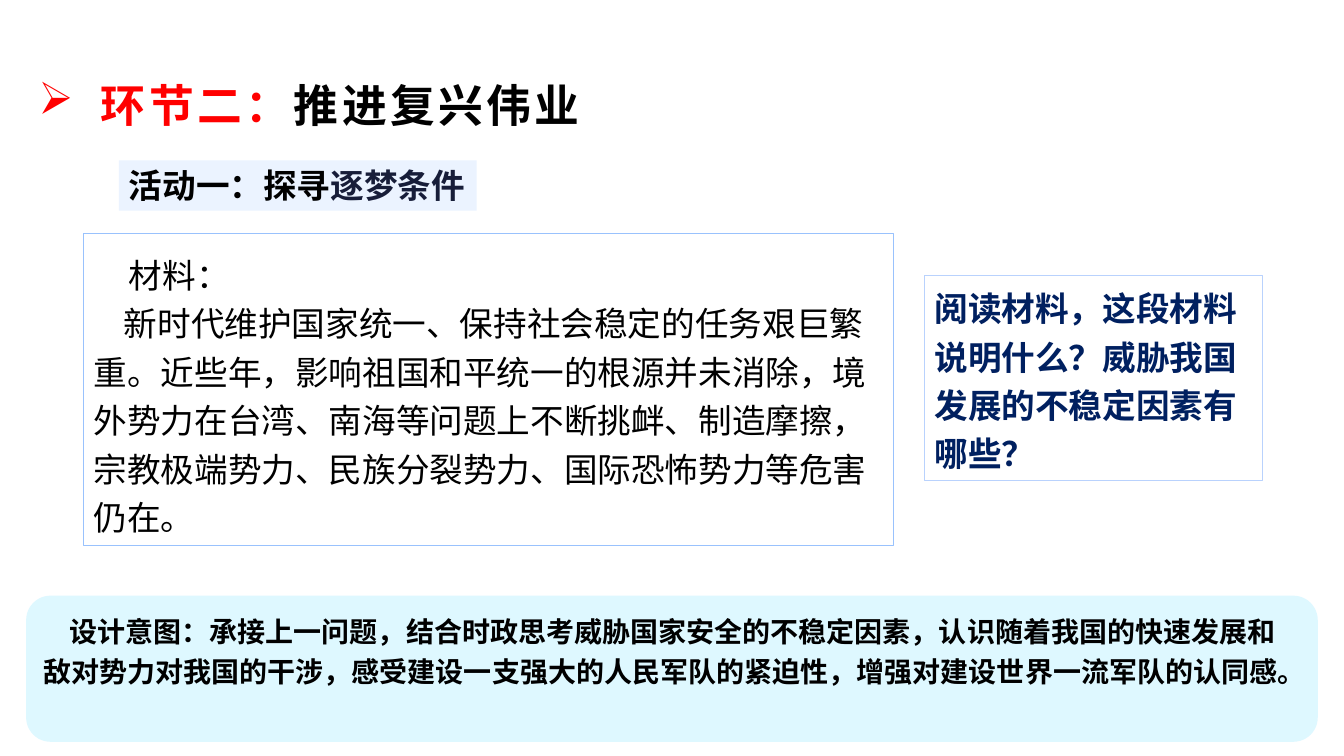
from lxml import etree
from pptx import Presentation, util as u
from pptx.dml.color import RGBColor
from pptx.enum import shapes, text
from pptx.oxml.ns import qn

WIDTH, HEIGHT = u.Inches(13.33), u.Inches(7.5)
SANS, LATIN = "Noto Sans CJK SC", "Arial"
RED = RGBColor(0xFF, 0x00, 0x00)
BLACK = RGBColor(0x00, 0x00, 0x00)
INK = RGBColor(0x17, 0x1D, 0x39)
NAVY = RGBColor(0x00, 0x20, 0x60)
CYAN = RGBColor(0xDE, 0xF8, 0xFF)
PALE_BLUE = RGBColor(0xEB, 0xF3, 0xFF)
BLUE_LINE = RGBColor(0x99, 0xC2, 0xFD)
LIGHT_LINE = RGBColor(0xB9, 0xD2, 0xFD)


def area(left, top, width, height):
    return [int(share * side / 100) for share, side in
            zip((left, top, width, height), (WIDTH, HEIGHT) * 2)]


def style_font(font, size, color, bold=False, name=SANS):
    font.size, font.bold, font.name = u.Pt(size), bold, name
    font.color.rgb = color
    latin = font._element.find(qn("a:latin"))
    east = etree.Element(qn("a:ea"), typeface=SANS)
    latin.addnext(east)


def set_indent(para, first, margin=0):
    properties = para._p.get_or_add_pPr()
    properties.set("marL", str(u.Inches(margin)))
    properties.set("indent", str(u.Inches(first)))
    return properties


def add_panel(page, place, kind=shapes.MSO_SHAPE.RECTANGLE, fill=None, line=None):
    box = page.shapes.add_shape(kind, *area(*place))
    box.shadow.inherit = False
    if fill is None:
        box.fill.background()
    else:
        box.fill.solid()
        box.fill.fore_color.rgb = fill
    if line is None:
        box.line.fill.background()
    else:
        box.line.color.rgb = line
        box.line.width = u.Pt(0.75)
    box.text_frame.word_wrap = True
    box.text_frame.vertical_anchor = text.MSO_ANCHOR.TOP
    return box.text_frame


def write_para(para, words, size, color=BLACK, bold=False, first=0):
    set_indent(para, first)
    para.alignment = text.PP_ALIGN.LEFT
    para.line_spacing = 1.2
    para.add_run().text = words
    style_font(para.font, size, color, bold)


def write_spans(para, size, spans, spacing=None):
    para.alignment = text.PP_ALIGN.LEFT
    for words, color, name in spans:
        span = para.add_run()
        span.text = words
        style_font(span.font, size, color, True, name)
        if spacing:
            span.font._element.set("spc", str(int(spacing * 100)))


def add_heading(page):
    frame = page.shapes.add_textbox(*area(2.33, 9.33, 90, 8.93)).text_frame
    frame.word_wrap = True
    frame.vertical_anchor = text.MSO_ANCHOR.MIDDLE
    frame.margin_left = frame.margin_right = u.Inches(0.07)
    frame.margin_top = frame.margin_bottom = u.Inches(0.03)
    para = frame.paragraphs[0]
    properties = set_indent(para, -0.62, 0.62)
    etree.SubElement(properties, qn("a:buChar"), char="➢")
    write_spans(para, 32, [("环节二：", RED, SANS), ("推进复兴伟业", BLACK, SANS)], 2.4)


def add_activity(page):
    frame = add_panel(page, (8.85, 21.2, 26.63, 6.67), fill=PALE_BLUE)
    frame.word_wrap = False
    write_spans(frame.paragraphs[0], 24, [
        ("活动一", BLACK, LATIN), ("：探寻", BLACK, SANS), ("逐梦条件", INK, SANS)])


def add_material(page):
    frame = add_panel(page, (6.23, 30.93, 60.24, 41.2), line=BLUE_LINE)
    frame.margin_top = u.Inches(0.13)
    write_para(frame.paragraphs[0], "材料：", 24, first=0.35)
    write_para(frame.add_paragraph(),
               "新时代维护国家统一、保持社会稳定的任务艰巨繁重。近些年，"
               "影响祖国和平统一的根源并未消除，境外势力在台湾、南海等问题上"
               "不断挑衅、制造摩擦，宗教极端势力、民族分裂势力、"
               "国际恐怖势力等危害仍在。", 24, first=0.3)


def add_question(page):
    frame = add_panel(page, (68.79, 36.4, 25.13, 27.2), line=LIGHT_LINE)
    write_para(frame.paragraphs[0],
               "阅读材料，这段材料说明什么？威胁我国发展的不稳定因素有哪些？",
               24, NAVY, True)


def add_intent(page):
    frame = add_panel(page, (1.95, 78.8, 96.1, 19.33),
                      shapes.MSO_SHAPE.ROUNDED_RECTANGLE, CYAN)
    write_para(frame.paragraphs[0],
               "设计意图：承接上一问题，结合时政思考威胁国家安全的不稳定因素，"
               "认识随着我国的快速发展和敌对势力对我国的干涉，"
               "感受建设一支强大的人民军队的紧迫性，增强对建设世界一流军队的认同感。",
               20, bold=True, first=0.26)


def main():
    deck = Presentation()
    deck.slide_width, deck.slide_height = WIDTH, HEIGHT
    page = deck.slides.add_slide(deck.slide_layouts[6])
    add_heading(page)
    add_intent(page)
    add_activity(page)
    add_material(page)
    add_question(page)
    deck.save("out.pptx")


if __name__ == "__main__":
    main()
